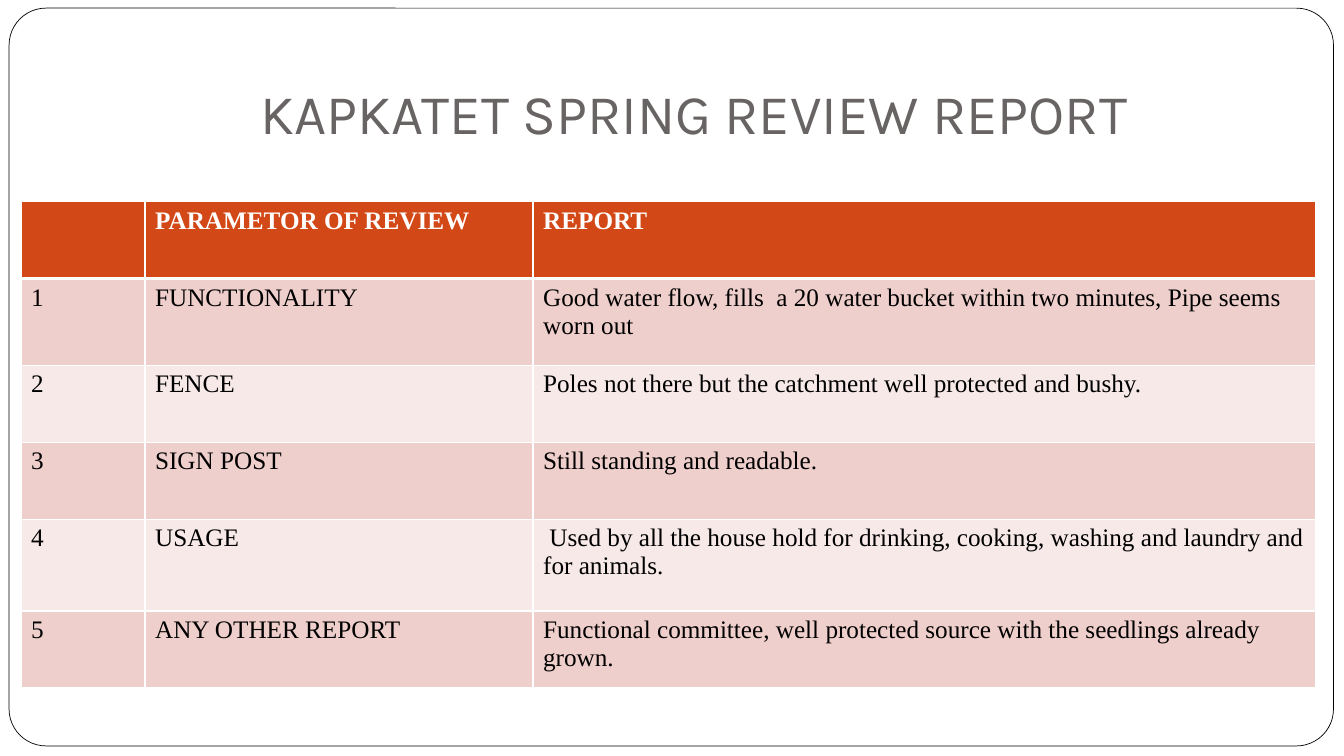
from dataclasses import dataclass

from lxml import etree
from pptx import Presentation
from pptx.dml.color import RGBColor
from pptx.enum.shapes import MSO_SHAPE
from pptx.enum.text import MSO_ANCHOR, PP_ALIGN
from pptx.oxml.ns import qn
from pptx.util import Pt

ROUNDED = MSO_SHAPE.ROUNDED_RECTANGLE
BOTTOM = MSO_ANCHOR.BOTTOM
CENTER = PP_ALIGN.CENTER

WHITE = RGBColor(0xFF, 0xFF, 0xFF)
BLACK = RGBColor(0x00, 0x00, 0x00)
GRAY = RGBColor(0x69, 0x64, 0x64)
ORANGE = RGBColor(0xD3, 0x48, 0x17)
PINK = RGBColor(0xEF, 0xCF, 0xCC)
PALE_PINK = RGBColor(0xF7, 0xE9, 0xE8)

TITLE_FONT = "Karla"
BODY_FONT = "Times New Roman"
COLUMN_WIDTHS = (88.6, 277.2, 558.7)
THIN, THICK = 1, 3


@dataclass
class ReviewRow:
    number: str
    parameter: str
    report: str
    height: float = 55


ROWS = [
    ReviewRow("", "PARAMETOR OF REVIEW", "REPORT"),
    ReviewRow("1", "FUNCTIONALITY",
              "Good water flow, fills  a 20 water bucket within two minutes, "
              "Pipe seems worn out", 62),
    ReviewRow("2", "FENCE",
              "Poles not there but the catchment well protected and bushy."),
    ReviewRow("3", "SIGN POST", "Still standing and readable."),
    ReviewRow("4", "USAGE",
              " Used by all the house hold for drinking, cooking, washing and "
              "laundry and for animals.", 65.5),
    ReviewRow("5", "ANY OTHER REPORT",
              "Functional committee, well protected source with the seedlings "
              "already grown."),
]


def add_frame(slide) -> None:
    sp = slide.shapes.add_shape(ROUNDED, Pt(6.5), Pt(5.8), Pt(946), Pt(527))
    sp.adjustments[0] = 0.05
    sp.shadow.inherit = False
    sp.fill.solid()
    sp.fill.fore_color.rgb = WHITE
    sp.line.color.rgb = BLACK
    sp.line.width = Pt(0.5)
    # Send behind the title
    slide.shapes.element.insert(2, sp.element)


def format_title(title) -> None:
    title.left, title.top = Pt(96), Pt(21.6)
    title.width, title.height = Pt(816), Pt(90)
    tf = title.text_frame
    tf.text = "KAPKATET SPRING REVIEW REPORT"
    tf.vertical_anchor = BOTTOM
    tf.margin_left, tf.margin_right = Pt(7.2), Pt(23.7)
    tf.margin_top, tf.margin_bottom = Pt(3.6), Pt(7.2)
    p = tf.paragraphs[0]
    p.alignment = CENTER
    font = p.runs[0].font
    font.name, font.size = TITLE_FONT, Pt(40)
    font.color.rgb = GRAY


def add_borders(cell, top: int, bottom: int) -> None:
    tc_pr = cell._tc.get_or_add_tcPr()
    for tag, width in (("lnL", THIN), ("lnR", THIN), ("lnT", top), ("lnB", bottom)):
        ln = etree.SubElement(tc_pr, qn(f"a:{tag}"), w=str(Pt(width)))
        fill = etree.SubElement(ln, qn("a:solidFill"))
        etree.SubElement(fill, qn("a:srgbClr"), val=str(WHITE))


def format_cell(cell, text: str, row: int) -> None:
    header = row == 0
    add_borders(cell, THICK if row == 1 else THIN, THICK if header else THIN)
    cell.fill.solid()
    cell.fill.fore_color.rgb = ORANGE if header else PINK if row % 2 else PALE_PINK
    cell.text = text
    for r in cell.text_frame.paragraphs[0].runs:
        r.font.name, r.font.size, r.font.bold = BODY_FONT, Pt(18), header
        r.font.color.rgb = WHITE if header else BLACK


def add_review_table(slide) -> None:
    table = slide.shapes.add_table(
        len(ROWS), len(COLUMN_WIDTHS), Pt(15), Pt(144),
        Pt(sum(COLUMN_WIDTHS)), Pt(sum(row.height for row in ROWS))).table
    for column, width in zip(table.columns, COLUMN_WIDTHS):
        column.width = Pt(width)
    for i, row in enumerate(ROWS):
        table.rows[i].height = Pt(row.height)
        for j, text in enumerate((row.number, row.parameter, row.report)):
            format_cell(table.cell(i, j), text, i)


def main() -> None:
    prs = Presentation()
    prs.slide_width, prs.slide_height = Pt(960), Pt(540)
    slide = prs.slides.add_slide(prs.slide_layouts[5])
    add_frame(slide)
    format_title(slide.shapes.title)
    add_review_table(slide)
    prs.save("out.pptx")


if __name__ == "__main__":
    main()
